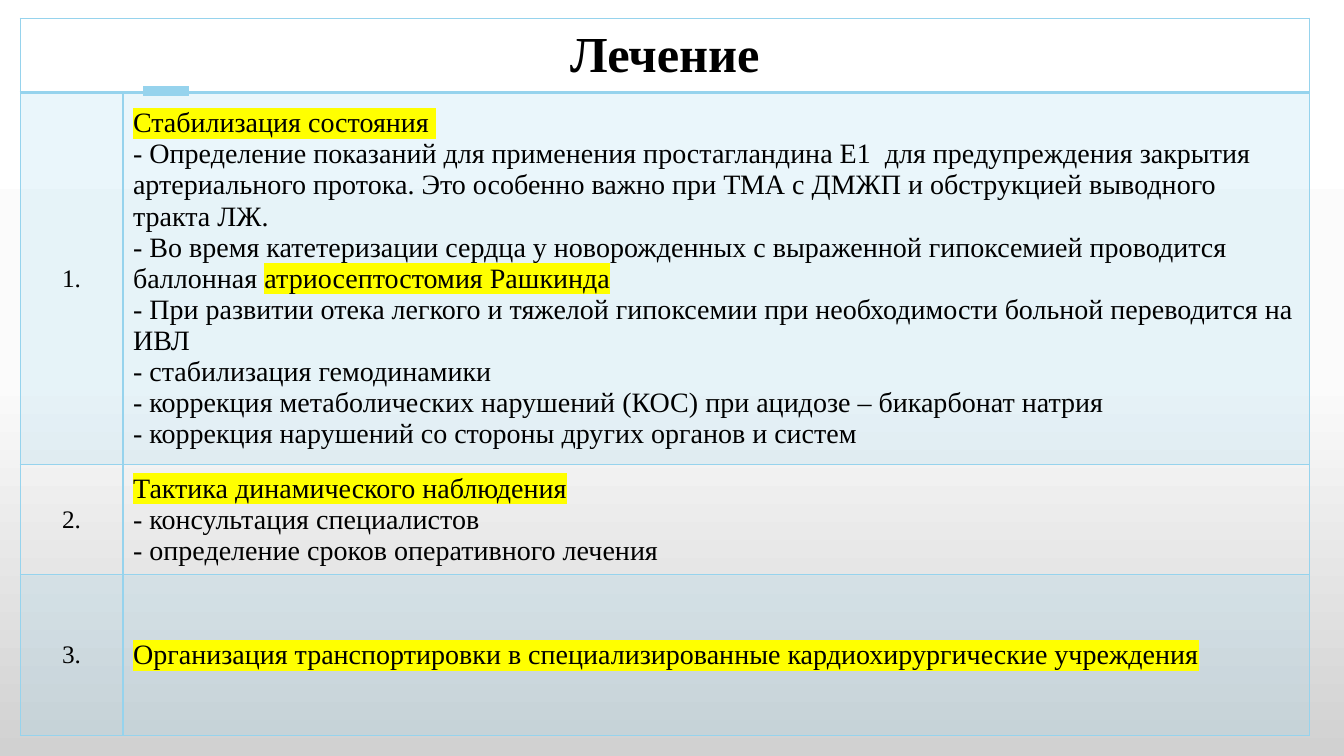
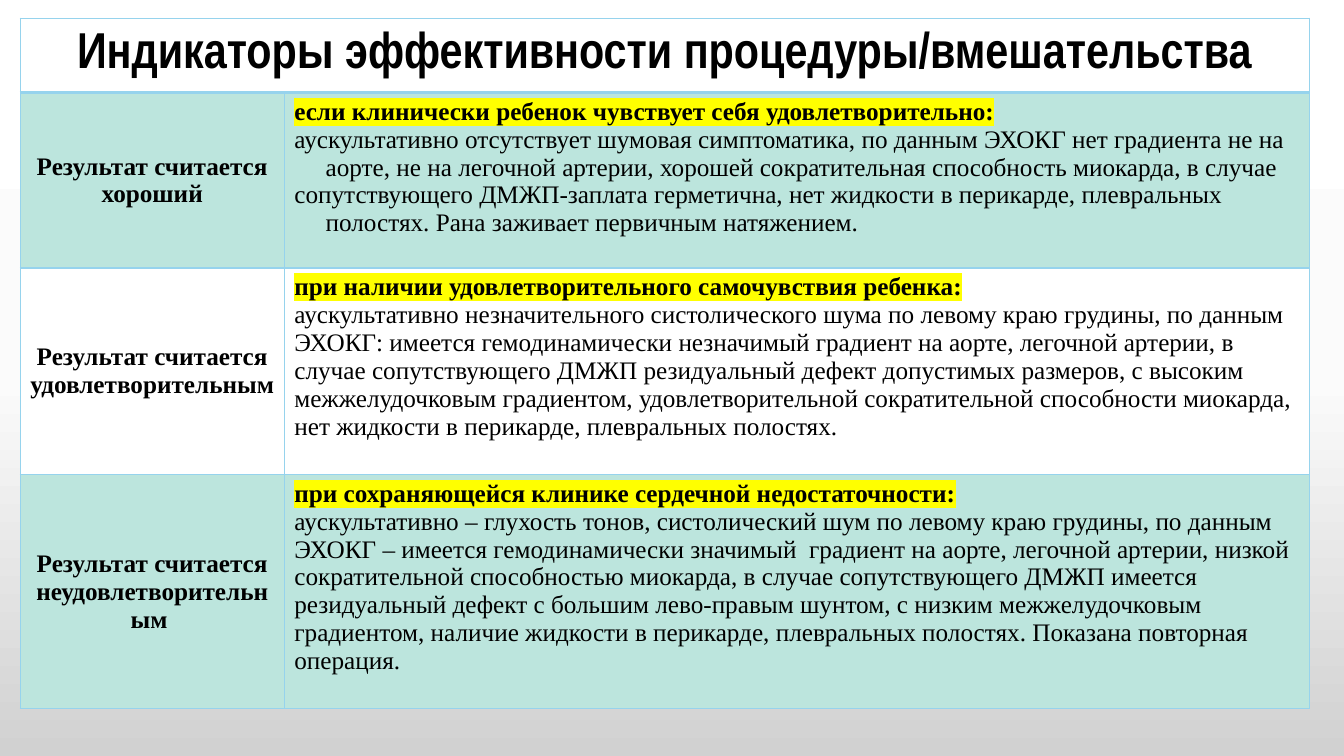
from lxml import etree
from pptx import Presentation
from pptx.dml.color import RGBColor
from pptx.enum.shapes import MSO_CONNECTOR
from pptx.enum.text import MSO_ANCHOR, PP_ALIGN
from pptx.oxml.ns import qn
from pptx.util import Inches, Pt

LINE = MSO_CONNECTOR.STRAIGHT
MIDDLE, TOP = MSO_ANCHOR.MIDDLE, MSO_ANCHOR.TOP
LEFT, CENTER = PP_ALIGN.LEFT, PP_ALIGN.CENTER

COLORS = {
    "text": "000000",
    "sky": "96D3ED",
    "mint": "BCE5DD",
    "white": "FFFFFF",
    "mark": "FFFF00",
}
SHADES = ((0, "FFFFFF"), (50, "FBFBFB"), (100, "D1D1D1"))
SERIF, NARROW = "Times New Roman", "Arial Narrow"
WIDTH, HEAD = 12.79, 0.74

# In cell text, *stars* enclose marked words and a leading > hangs the indent.
CARE = [
    (3.69, "1.", [
        "*Стабилизация состояния *",
        "- Определение показаний для применения простагландина Е1  для "
        "предупреждения закрытия артериального протока. Это особенно важно "
        "при ТМА с ДМЖП и обструкцией выводного тракта ЛЖ.",
        "- Во время катетеризации сердца у новорожденных с выраженной "
        "гипоксемией проводится баллонная *атриосептостомия Рашкинда*",
        "- При развитии отека легкого и тяжелой гипоксемии при "
        "необходимости больной переводится на ИВЛ",
        "- стабилизация гемодинамики",
        "- коррекция метаболических нарушений (КОС) при ацидозе – "
        "бикарбонат натрия",
        "- коррекция нарушений со стороны других органов и систем",
    ]),
    (1.09, "2.", [
        "*Тактика динамического наблюдения*",
        "- консультация специалистов",
        "- определение сроков оперативного лечения",
    ]),
    (1.6, "3.", [
        "*Организация транспортировки в специализированные "
        "кардиохирургические учреждения*",
    ]),
]

RESULTS = [
    (1.74, "Результат считается хороший", [
        ">*если клинически ребенок чувствует себя удовлетворительно:*",
        ">аускультативно отсутствует шумовая симптоматика, по данным ЭХОКГ "
        "нет градиента не на аорте, не на легочной артерии, хорошей "
        "сократительная способность миокарда, в случае",
        ">сопутствующего ДМЖП-заплата герметична, нет жидкости в перикарде, "
        "плевральных полостях. Рана заживает первичным натяжением.",
    ]),
    (2.05, "Результат считается удовлетворительным ", [
        ">*при наличии удовлетворительного самочувствия ребенка:*",
        "аускультативно незначительного систолического шума по левому краю "
        "грудины, по данным ЭХОКГ: имеется гемодинамически незначимый "
        "градиент на аорте, легочной артерии, в случае сопутствующего ДМЖП "
        "резидуальный дефект допустимых размеров, с высоким "
        "межжелудочковым градиентом, удовлетворительной сократительной "
        "способности миокарда, нет жидкости в перикарде, плевральных "
        "полостях.",
    ]),
    (2.32, "Результат считается неудовлетворительным ", [
        ">*при сохраняющейся клинике сердечной недостаточности:*",
        "аускультативно – глухость тонов, систолический шум по левому краю "
        "грудины, по данным ЭХОКГ – имеется гемодинамически значимый  "
        "градиент на аорте, легочной артерии, низкой сократительной "
        "способностью миокарда, в случае сопутствующего ДМЖП имеется "
        "резидуальный дефект с большим лево-правым шунтом, с низким "
        "межжелудочковым градиентом, наличие жидкости в перикарде, "
        "плевральных полостях. Показана повторная операция.",
    ]),
]


def add(parent, tag, **attrs):
    """Append an XML child and return it."""
    child = etree.SubElement(parent, qn(tag))
    for name, value in attrs.items():
        child.set(name, str(value))
    return child


class Deck:
    def __init__(self):
        self.prs = Presentation()
        self.prs.slide_width = Inches(13.33)
        self.prs.slide_height = Inches(7.5)
        self.slide = None
        self.shade()

    def shade(self):
        """Give the master its grey gradient."""
        master = self.prs.slide_master
        fill = master.background.fill
        fill.gradient()
        fill.gradient_angle = 270
        stops = master.element.find(".//" + qn("a:gsLst"))
        for stop in list(stops):
            stops.remove(stop)
        for place, color in SHADES:
            stop = add(stops, "a:gs", pos=place * 1000)
            add(stop, "a:srgbClr", val=color)

    def page(self):
        """Start a slide with its short accent bar."""
        self.slide = self.prs.slides.add_slide(self.prs.slide_layouts[6])
        bar = self.slide.shapes.add_connector(
            LINE, Inches(1.42), Inches(0.9), Inches(1.87), Inches(0.9))
        bar.line.color.rgb = RGBColor.from_string(COLORS["sky"])
        bar.line.width = Pt(7)
        add(bar._element.spPr, "a:effectLst")

    def piece(self, para, text, size, bold=False, font=SERIF, mark=False):
        """Add one formatted run."""
        run = para.add_run()
        run.text = text
        run.font.size = Pt(size)
        run.font.bold = bold
        run.font.name = font
        run.font.color.rgb = RGBColor.from_string(COLORS["text"])
        if mark:
            glow = etree.Element(qn("a:highlight"))
            add(glow, "a:srgbClr", val=COLORS["mark"])
            run.font._element.find(qn("a:solidFill")).addnext(glow)

    def label(self, cell, paras, size, align=LEFT, anchor=MIDDLE,
              bold=False, strong=False, font=SERIF):
        """Put text in a cell; strong makes the marked words bold."""
        cell.vertical_anchor = anchor
        frame = cell.text_frame
        for i, text in enumerate(paras):
            para = frame.add_paragraph() if i else frame.paragraphs[0]
            para.alignment = align
            if text.startswith(">"):
                props = para._p.get_or_add_pPr()
                props.set("marL", str(Inches(0.31)))
                props.set("indent", str(-Inches(0.31)))
            for j, part in enumerate(text.lstrip(">").split("*")):
                mark = j % 2 == 1
                if part:
                    self.piece(para, part, size, bold or (strong and mark),
                               font, mark)

    def paint(self, cell, color, alpha=100):
        if color is None:
            cell.fill.background()
            return
        cell.fill.solid()
        cell.fill.fore_color.rgb = RGBColor.from_string(COLORS[color])
        if alpha < 100:
            tint = cell._tc.tcPr.find(".//" + qn("a:srgbClr"))
            add(tint, "a:alpha", val=alpha * 1000)

    def edge(self, cell, row):
        """Rule all four sides, heavier between the head and the body."""
        props = cell._tc.get_or_add_tcPr()
        widths = {"L": 1, "R": 1, "T": 2 if row == 1 else 1,
                  "B": 2 if row == 0 else 1}
        for i, (side, width) in enumerate(widths.items()):
            line = etree.Element(qn("a:ln" + side), w=str(Pt(width)))
            add(add(line, "a:solidFill"), "a:srgbClr", val=COLORS["sky"])
            props.insert(i, line)

    def table(self, title, rows, first, fills, names, body, font=SERIF):
        """Draw a titled table; fills holds one (color, alpha) per row."""
        tall = [HEAD] + [row[0] for row in rows]
        grid = self.slide.shapes.add_table(
            len(tall), 2, Inches(0.2), Inches(0.18),
            Inches(WIDTH), Inches(sum(tall))).table
        grid.first_row = grid.horz_banding = False
        for col, width in zip(grid.columns, (first, WIDTH - first)):
            col.width = Inches(width)
        for i, (height, fill) in enumerate(zip(tall, fills)):
            grid.rows[i].height = Inches(height)
            for cell in grid.rows[i].cells:
                self.paint(cell, *fill)
                self.edge(cell, i)
        head = grid.cell(0, 0)
        head.merge(grid.cell(0, 1))
        self.label(head, [title], 36, CENTER, bold=True, font=font)
        for i, (_, name, paras) in enumerate(rows, 1):
            self.label(grid.cell(i, 0), [name], align=CENTER, **names)
            self.label(grid.cell(i, 1), paras, **body)


def main():
    deck = Deck()
    none, sky = (None,), ("sky", 20)
    white, mint = ("white",), ("mint",)

    deck.page()
    deck.table("Лечение", CARE, 1.02, (none, sky, none, sky),
               names={"size": 18}, body={"size": 20})

    deck.page()
    deck.table("Индикаторы эффективности процедуры/вмешательства", RESULTS,
               2.62, (white, mint, white, mint),
               names={"size": 18, "bold": True},
               body={"size": 18, "anchor": TOP, "strong": True}, font=NARROW)

    deck.prs.save("out.pptx")


if __name__ == "__main__":
    main()
